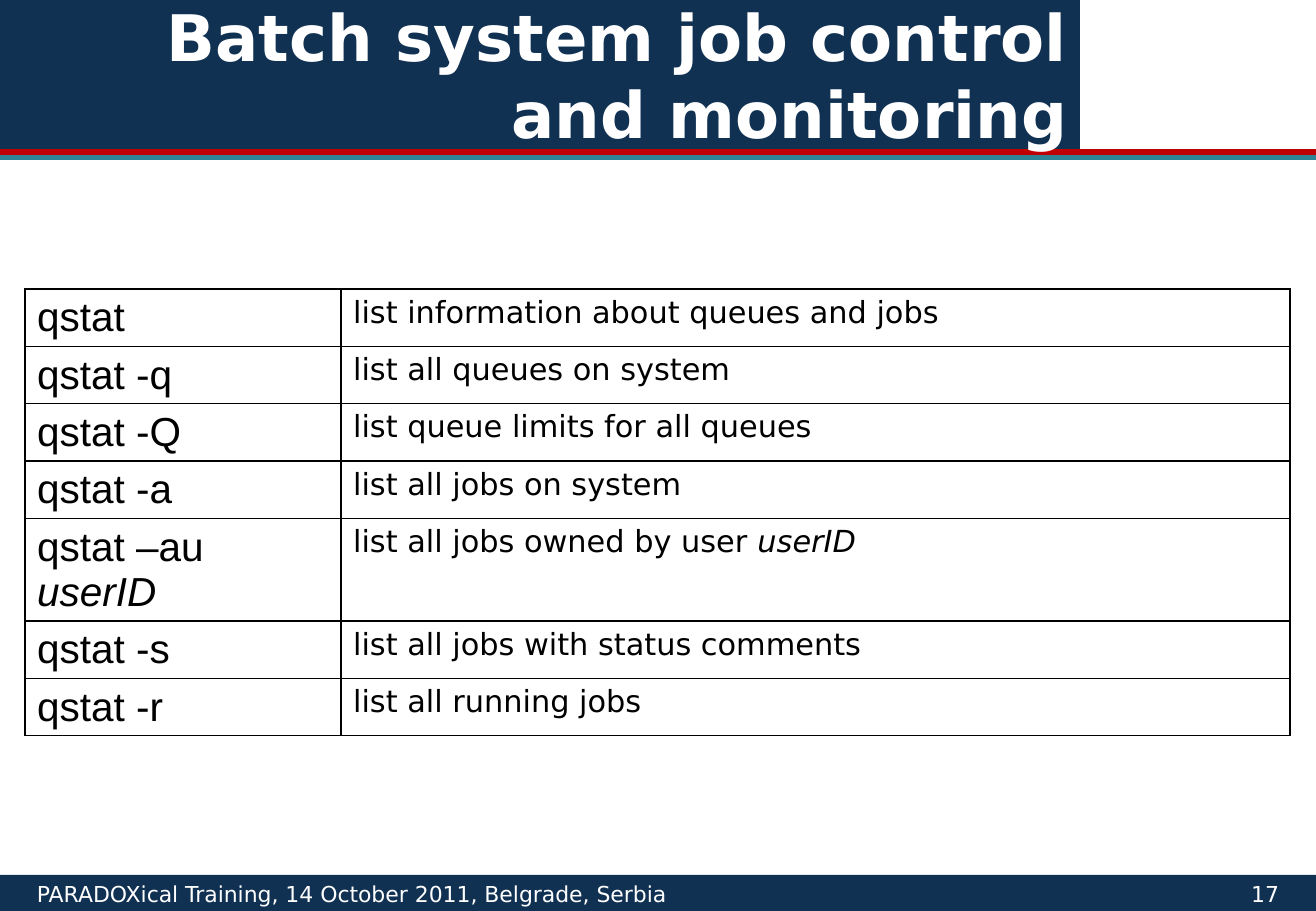
from dataclasses import dataclass

from lxml.etree import SubElement
from pptx import Presentation
from pptx.dml.color import RGBColor
from pptx.enum.shapes import MSO_SHAPE as Preset
from pptx.enum.text import MSO_ANCHOR as Anchor, MSO_AUTO_SIZE as AutoSize, PP_ALIGN as Align
from pptx.oxml.ns import qn
from pptx.util import Pt

EMU_PER_PX = 7526
SLIDE_W, SLIDE_H = 1316, 911
NAVY, RED, TEAL = "103152", "BF0000", "2E8497"
WHITE, BLACK = "FFFFFF", "000000"
SANS, COMMAND_FONT = "DejaVu Sans", "Arial"


@dataclass(frozen=True)
class Band:
    top: int
    height: int
    colour: str


@dataclass(frozen=True)
class Command:
    name: str
    meaning: str
    argument: str = ""
    height: int = 57


STRIPES = [Band(154, 6, TEAL), Band(149, 6, RED)]
FOOTER = Band(875, 36, NAVY)
FOOTER_LEFT, PAGE_NUMBER_RIGHT = 37, 1279

COMMANDS = [
    Command("qstat", "list information about queues and jobs"),
    Command("qstat -q", "list all queues on system"),
    Command("qstat -Q", "list queue limits for all queues"),
    Command("qstat -a", "list all jobs on system"),
    Command("qstat –au ", "list all jobs owned by user ", "userID", 102),
    Command("qstat -s", "list all jobs with status comments"),
    Command("qstat -r", "list all running jobs"),
]
COLUMN_WIDTHS = [316, 949]


def px(length: int) -> int:
    return length * EMU_PER_PX


def rgb(colour: str) -> RGBColor:
    return RGBColor.from_string(colour)


def set_font(paragraph, face: str, size: int, colour: str, bold: bool = False) -> None:
    font = paragraph.font
    font.name, font.size, font.bold = face, Pt(size), bold
    font.color.rgb = rgb(colour)


def add_band(slide, band: Band):
    shape = slide.shapes.add_shape(Preset.RECTANGLE, 0, px(band.top), px(SLIDE_W), px(band.height))
    shape.shadow.inherit = False
    shape.fill.solid()
    shape.fill.fore_color.rgb = rgb(band.colour)
    shape.line.fill.background()
    return shape


def add_title(slide, text: str) -> None:
    title = slide.shapes.title
    title.left, title.top, title.width, title.height = px(-1), px(-1), px(1081), px(150)
    title.fill.solid()
    title.fill.fore_color.rgb = rgb(NAVY)
    frame = title.text_frame
    frame.text = text
    frame.word_wrap, frame.auto_size = True, AutoSize.NONE
    frame.vertical_anchor = Anchor.MIDDLE
    paragraph = frame.paragraphs[0]
    paragraph.alignment = Align.RIGHT
    set_font(paragraph, SANS, 38, WHITE, bold=True)
    # The last line reaches over the stripes, so the title lies in front of them.
    slide.shapes._spTree.append(title._element)


def add_footer(slide, text: str, page: str) -> None:
    frame = add_band(slide, FOOTER).text_frame
    frame.word_wrap = True
    frame.vertical_anchor = Anchor.TOP
    frame.margin_left, frame.margin_right = px(FOOTER_LEFT), px(12)
    paragraph = frame.paragraphs[0]
    paragraph.text = f"{text}\t{page}"
    paragraph.alignment = Align.LEFT
    tabs = SubElement(paragraph._p.get_or_add_pPr(), qn("a:tabLst"))
    SubElement(tabs, qn("a:tab"), pos=str(px(PAGE_NUMBER_RIGHT - FOOTER_LEFT)), algn="r")
    set_font(paragraph, SANS, 13, WHITE)


def add_borders(cell) -> None:
    properties = cell._tc.get_or_add_tcPr()
    for position, side in enumerate(("lnL", "lnR", "lnT", "lnB")):
        line = SubElement(properties, qn(f"a:{side}"), w=str(Pt(1)))
        fill = SubElement(line, qn("a:solidFill"))
        SubElement(fill, qn("a:srgbClr"), val=BLACK)
        properties.insert(position, line)


def fill_cell(cell, text: str, argument: str, face: str, size: int) -> None:
    cell.fill.background()
    add_borders(cell)
    paragraph = cell.text_frame.paragraphs[0]
    paragraph.add_run().text = text
    if argument:
        run = paragraph.add_run()
        run.text = argument
        run.font.italic = True
    paragraph.alignment = Align.LEFT
    set_font(paragraph, face, size, BLACK)


def add_command_table(slide) -> None:
    height = sum(command.height for command in COMMANDS)
    table = slide.shapes.add_table(len(COMMANDS), len(COLUMN_WIDTHS), px(25), px(289),
                                   px(sum(COLUMN_WIDTHS)), px(height)).table
    table.first_row = table.horz_banding = False
    for column, width in zip(table.columns, COLUMN_WIDTHS):
        column.width = px(width)
    for row, command in zip(table.rows, COMMANDS):
        row.height = px(command.height)
        name_cell, meaning_cell = row.cells
        fill_cell(name_cell, command.name, command.argument, COMMAND_FONT, 24)
        fill_cell(meaning_cell, command.meaning, command.argument, SANS, 18)


def main() -> None:
    deck = Presentation()
    deck.slide_width, deck.slide_height = px(SLIDE_W), px(SLIDE_H)
    slide = deck.slides.add_slide(deck.slide_layouts[5])
    for stripe in STRIPES:
        add_band(slide, stripe)
    add_title(slide, "Batch system job control and monitoring")
    add_footer(slide, "PARADOXical Training, 14 October 2011, Belgrade, Serbia", "17")
    add_command_table(slide)
    deck.save("out.pptx")


if __name__ == "__main__":
    main()
